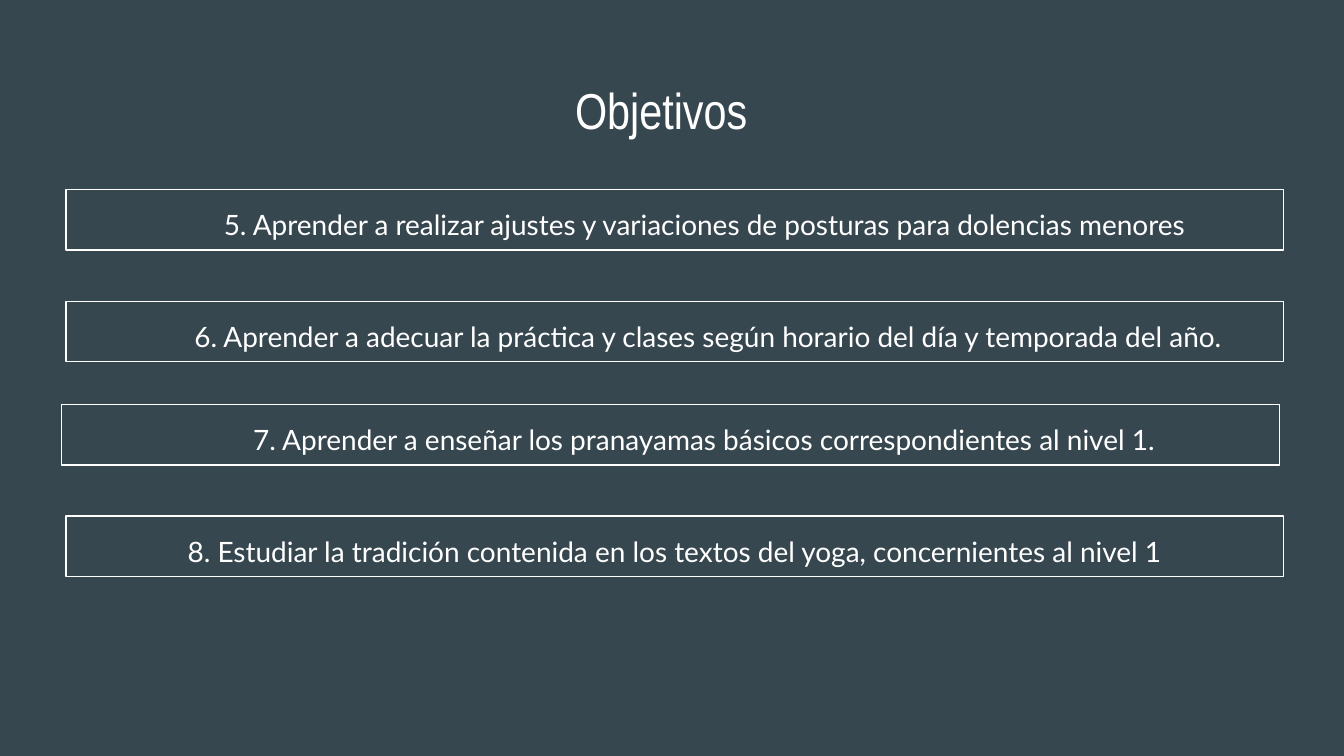
from pptx import Presentation
from pptx.dml.color import RGBColor
from pptx.enum import shapes, text
from pptx.util import Pt

WHITE = "FFFFFF"
SLATE = "37474F"
INSET = Pt(7.2)
FRAME = {
    "margin_left": INSET, "margin_top": INSET,
    "margin_right": INSET, "margin_bottom": INSET,
    "word_wrap": True, "vertical_anchor": text.MSO_ANCHOR.TOP,
}
# left, top, indent, wording
GOALS = [
    (35.3, 101.5, 36, "5. Aprender a realizar ajustes y variaciones de posturas para dolencias menores "),
    (35.3, 161.4, 36, "6. Aprender a adecuar la práctica y clases según horario del día y temporada del año."),
    (33.1, 216.7, 36, "7. Aprender a enseñar los pranayamas básicos correspondientes al nivel 1."),
    (35.3, 276.5, 0, "8. Estudiar la tradición contenida en los textos del yoga, concernientes al nivel 1"),
]


def paint(fill, tone):
    fill.solid()
    fill.fore_color.rgb = RGBColor.from_string(tone)


def apply(item, values):
    for name, value in values.items():
        setattr(item, name, value)


def write(shape, words, font, size, fit, spacing=1.0):
    """Fill the shape with one centred white paragraph and return it."""
    frame = shape.text_frame
    apply(frame, FRAME | {"auto_size": fit})
    para = frame.paragraphs[0]
    apply(para, {"alignment": text.PP_ALIGN.CENTER, "line_spacing": spacing,
                 "space_before": Pt(0), "space_after": Pt(0)})
    run = para.add_run()
    run.text = words
    apply(run.font, {"name": font, "size": Pt(size)})
    paint(run.font.fill, WHITE)
    return para


def add_title(slide, words):
    title = slide.shapes.title
    apply(title, {"left": Pt(18.7), "top": Pt(35.3),
                  "width": Pt(671), "height": Pt(45.4)})
    write(title, words, "Arial Narrow", 27, text.MSO_AUTO_SIZE.NONE)


def add_goal(slide, left, top, indent, words):
    box = slide.shapes.add_shape(shapes.MSO_SHAPE.RECTANGLE,
                                 Pt(left), Pt(top), Pt(652.4), Pt(32.4))
    box.shadow.inherit = False
    box.fill.background()
    paint(box.line.fill, WHITE)
    box.line.width = Pt(0.75)
    para = write(box, words, "Lato", 15,
                 text.MSO_AUTO_SIZE.SHAPE_TO_FIT_TEXT, 1.15)
    if indent:
        props = para._p.get_or_add_pPr()
        props.set("marL", str(Pt(indent)))
        props.set("indent", "0")


def main():
    deck = Presentation()
    apply(deck, {"slide_width": Pt(720), "slide_height": Pt(405)})
    slide = deck.slides.add_slide(deck.slide_layouts[5])
    paint(slide.background.fill, SLATE)
    add_title(slide, "Objetivos")
    for goal in GOALS:
        add_goal(slide, *goal)
    deck.save("out.pptx")


if __name__ == "__main__":
    main()
